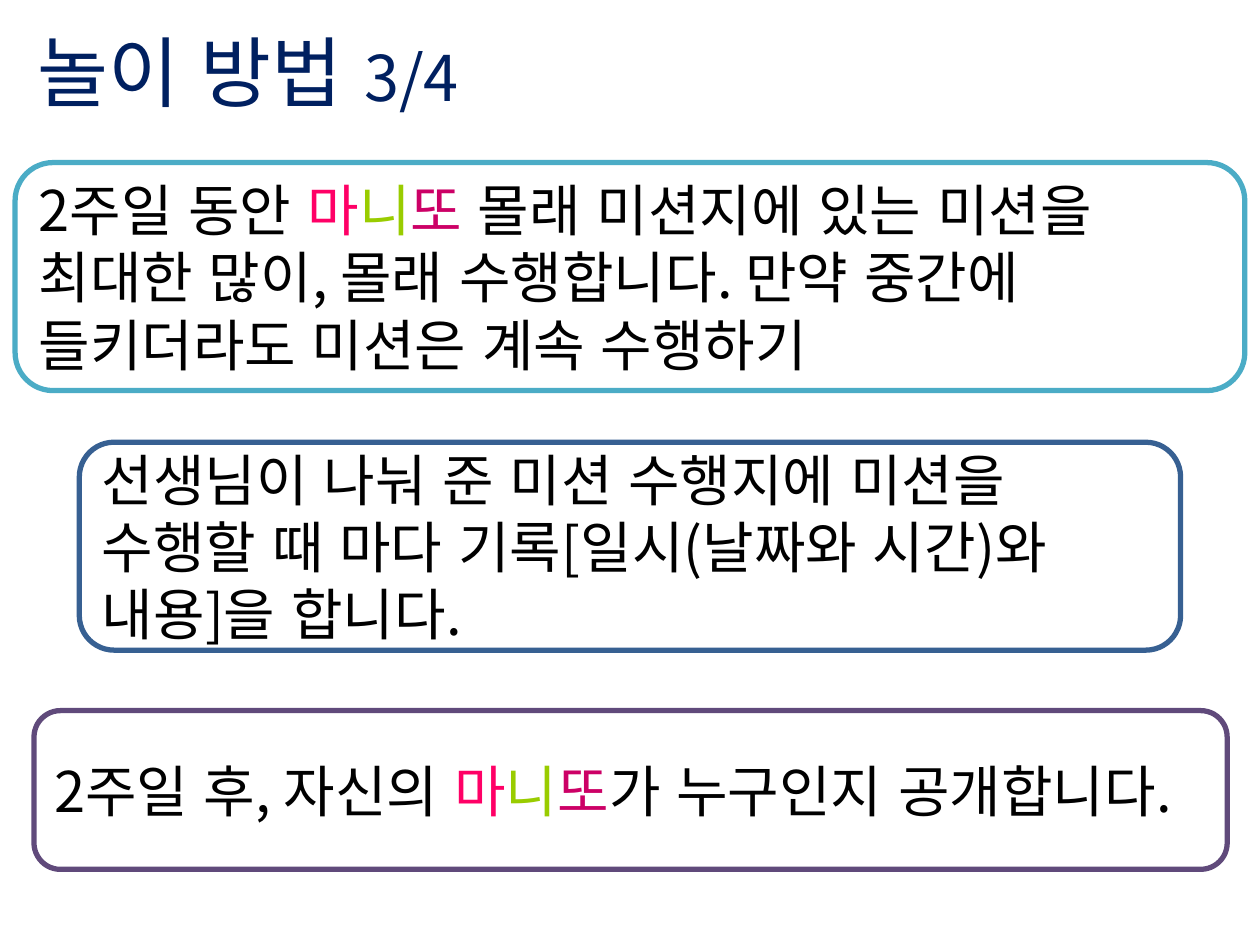
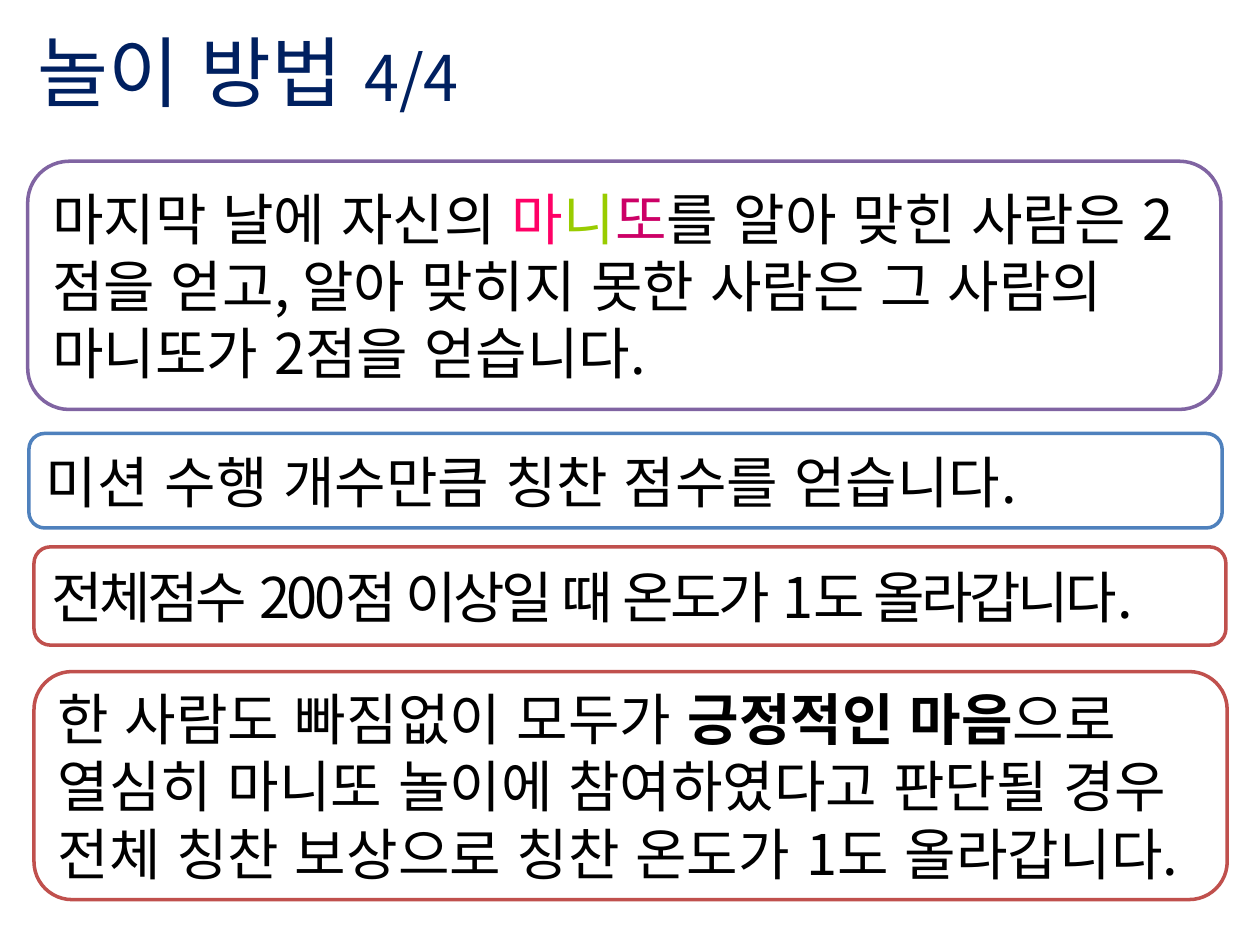
from pptx import Presentation
from pptx.dml.color import RGBColor
from pptx.enum import lang, shapes, text
from pptx.oxml import ns
from pptx.util import Inches, Pt
from lxml import etree

FONT = "Noto Sans CJK KR"
WHITE = RGBColor(0xFF, 0xFF, 0xFF)
BLACK = RGBColor(0x00, 0x00, 0x00)
NAVY = RGBColor(0x00, 0x20, 0x60)
PINK = RGBColor(0xFF, 0x00, 0x66)
LIME = RGBColor(0x99, 0xCC, 0x00)
MAGENTA = RGBColor(0xCC, 0x00, 0x66)
TEAL = RGBColor(0x4B, 0xAC, 0xC6)
DEEP_BLUE = RGBColor(0x37, 0x60, 0x92)
DEEP_PURPLE = RGBColor(0x60, 0x4A, 0x7B)
BLUE = RGBColor(0x4F, 0x81, 0xBD)
PURPLE = RGBColor(0x80, 0x64, 0xA2)
RED = RGBColor(0xC0, 0x50, 0x4D)

MANITO = [("마", {"color": PINK}), ("니", {"color": LIME}), ("또", {"color": MAGENTA})]


class RuleDeck:
    def __init__(self):
        self.deck = Presentation()
        self.deck.slide_width, self.deck.slide_height = Inches(10), Inches(7.5)
        self.page = None

    def add_page(self, number):
        self.page = self.deck.slides.add_slide(self.deck.slide_layouts[6])
        box = self.page.shapes.add_textbox(Inches(0.2), Inches(0.13), Inches(6.93), Inches(0.87))
        self.set_text(box, [("놀이 방법 ", {"size": Pt(44)}), (f"{number}/4", {"size": Pt(36)})], NAVY)

    def add_rule(self, left, top, width, height, line_color, line_width, spans, spacing=0):
        box = self.page.shapes.add_shape(
            shapes.MSO_SHAPE.ROUNDED_RECTANGLE,
            Inches(left), Inches(top), Inches(width), Inches(height))
        box.shadow.inherit = False
        box.fill.solid()
        box.fill.fore_color.rgb = WHITE
        box.line.color.rgb = line_color
        box.line.width = Pt(line_width)
        self.set_text(box, spans, BLACK, spacing)

    def set_text(self, box, spans, color, spacing=0):
        frame = box.text_frame
        frame.word_wrap = True
        frame.vertical_anchor = text.MSO_ANCHOR.MIDDLE
        para = frame.paragraphs[0]
        para.alignment = text.PP_ALIGN.LEFT
        for words, changes in spans:
            span = para.add_run()
            span.text = words
            style = {"name": FONT, "size": Pt(32), "bold": False,
                     "language_id": lang.MSO_LANGUAGE_ID.KOREAN, **changes}
            span.font.color.rgb = style.pop("color", color)
            for name, value in style.items():
                setattr(span.font, name, value)
            properties = span._r.get_or_add_rPr()
            etree.SubElement(properties, ns.qn("a:ea")).set("typeface", FONT)
            if spacing:
                properties.set("spc", str(spacing * 100))


def main():
    rules = RuleDeck()

    rules.add_page(3)
    rules.add_rule(0.12, 1.29, 9.76, 1.81, TEAL, 3, [
        ("2주일 동안 ", {}), *MANITO,
        (" 몰래 미션지에 있는 미션을 최대한 많이, 몰래 수행합니다. "
         "만약 중간에 들키더라도 미션은 계속 수행하기", {})])
    rules.add_rule(0.63, 3.51, 8.74, 1.65, DEEP_BLUE, 3, [
        ("선생님이 나눠 준 미션 수행지에 미션을 수행할 때 마다 "
         "기록[일시(날짜와 시간)와 내용]을 합니다.", {})])
    rules.add_rule(0.27, 5.64, 9.47, 1.26, DEEP_PURPLE, 3, [
        ("2주일 후, 자신의 ", {}), *MANITO, ("가 누구인지 공개합니다.", {})])

    rules.add_page(4)
    rules.add_rule(0.22, 1.28, 9.47, 1.97, PURPLE, 2, [
        ("마지막 날에 자신의 ", {}), *MANITO,
        ("를 알아 맞힌 사람은 2점을 얻고, 알아 맞히지 못한 사람은 "
         "그 사람의 마니또가 2점을 얻습니다.", {})])
    rules.add_rule(0.23, 3.44, 9.47, 0.75, BLUE, 2, [
        ("미션 수행 개수만큼 칭찬 점수를 얻습니다.", {})])
    rules.add_rule(0.27, 4.34, 9.46, 0.78, RED, 2, [
        ("전체점수 200점 이상일 때 온도가 1도 올라갑니다.", {})], spacing=-2)
    rules.add_rule(0.27, 5.33, 9.47, 1.81, RED, 2, [
        ("한 사람도 빠짐없이 모두가 ", {}), ("긍정적인 마음", {"bold": True}),
        ("으로 열심히 마니또 놀이에 참여하였다고 판단될 경우 "
         "전체 칭찬 보상으로 칭찬 온도가 1도 올라갑니다.", {})])

    rules.deck.save("out.pptx")


if __name__ == "__main__":
    main()
